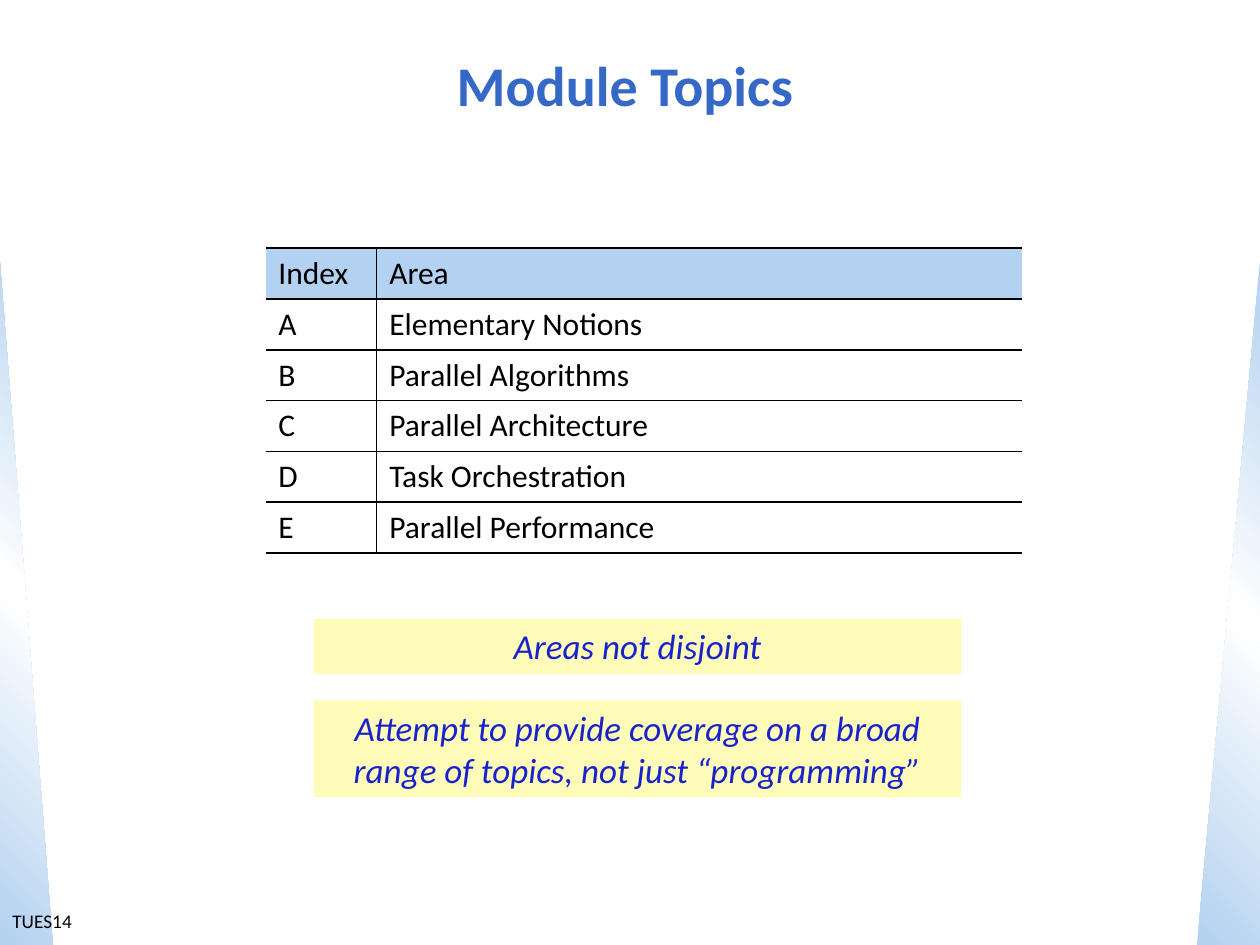
from copy import deepcopy
from pptx import Presentation
from pptx.dml.color import RGBColor
from pptx.enum.shapes import MSO_SHAPE
from pptx.enum.text import MSO_ANCHOR, PP_ALIGN
from pptx.oxml import parse_xml
from pptx.oxml.ns import nsdecls, qn
from pptx.util import Inches, Pt

HUES = {"title": "3568C7", "sky": "B3D1F0", "white": "FFFFFF",
        "note": "FFFBB8", "ink": "1822CD", "black": "000000"}
FONT = "Calibri"
TITLE = "Module Topics"
TAG = "TUES14"
ROWS = [("Index", "Area"), ("A", "Elementary Notions"),
        ("B", "Parallel Algorithms"), ("C", "Parallel Architecture"),
        ("D", "Task Orchestration"), ("E", "Parallel Performance")]
NOTES = [("Areas not disjoint", 4.91, 0.44),
         ("Attempt to provide coverage on a broad range of topics, "
          "not just “programming”", 5.56, 0.77)]
WIDE, HIGH = 10, 7.5
EDGES = [(0, 0.42, 45, False), (9.5, 0.5, 315, True)]
EDGE_TOP = 2.08
COLS = (0.88, 5.12)
GRID = (2.11, 1.97, sum(COLS), 2.42)
PLAIN = "{2D5ABB26-0587-4C30-8999-92F81FD0307C}"


def hue(name):
    return RGBColor.from_string(HUES[name])


def box(*dims):
    return [Inches(d) for d in dims]


def write(frame, text, size, color, align=PP_ALIGN.LEFT, bold=False, slant=False):
    para = frame.paragraphs[0]
    para.alignment = align
    run = para.add_run()
    run.text = text
    font = run.font
    font.name, font.size, font.bold, font.italic = FONT, Pt(size), bold, slant
    font.color.rgb = hue(color)


def label(slide, dims, text, *style, **more):
    frame = slide.shapes.add_textbox(*box(*dims)).text_frame
    frame.word_wrap = True
    frame.vertical_anchor = more.pop("anchor", MSO_ANCHOR.TOP)
    write(frame, text, *style, **more)


def shape(slide, kind, dims):
    item = slide.shapes.add_shape(kind, *box(*dims))
    item.shadow.inherit = False
    item.line.fill.background()
    return item


def edge(slide, left, width, angle, flip):
    item = shape(slide, MSO_SHAPE.RIGHT_TRIANGLE,
                 (left, EDGE_TOP, width, HIGH - EDGE_TOP))
    item.fill.gradient()
    item.fill.gradient_angle = angle
    stops = item.element.spPr.find(qn("a:gradFill")).find(qn("a:gsLst"))
    stops.insert(1, deepcopy(stops[0]))
    for stop, place, name in zip(item.fill.gradient_stops, (0, 0.5, 1),
                                 ("sky", "white", "sky")):
        stop.position = place
        stop.color.rgb = hue(name)
    if flip:
        item.element.spPr.find(qn("a:xfrm")).set("flipH", "1")


def rule(cell, sides):
    props = cell._tc.get_or_add_tcPr()
    for spot, side in enumerate(sides):
        props.insert(spot, parse_xml(
            f'<a:ln{side} {nsdecls("a")} w="12700"><a:solidFill>'
            f'<a:srgbClr val="{HUES["black"]}"/></a:solidFill></a:ln{side}>'))


def table(slide):
    frame = slide.shapes.add_table(len(ROWS), len(COLS), *box(*GRID))
    grid = frame.table
    grid.horz_banding = False
    frame.element.find(".//" + qn("a:tableStyleId")).text = PLAIN
    for col, width in zip(grid.columns, COLS):
        col.width = Inches(width)
    for r, row in enumerate(ROWS):
        grid.rows[r].height = Inches(GRID[3] / len(ROWS))
        for c, text in enumerate(row):
            cell = grid.cell(r, c)
            if r:
                cell.fill.background()
            else:
                cell.fill.solid()
                cell.fill.fore_color.rgb = hue("sky")
            rule(cell, "LTB" if c else "RTB")
            write(cell.text_frame, text, 18, "black")


def note(slide, text, top, height):
    item = shape(slide, MSO_SHAPE.RECTANGLE, (2.49, top, 5.14, height))
    item.fill.solid()
    item.fill.fore_color.rgb = hue("note")
    frame = item.text_frame
    frame.word_wrap = True
    frame.vertical_anchor = MSO_ANCHOR.TOP
    write(frame, text, 20, "ink", PP_ALIGN.CENTER, slant=True)


def main():
    deck = Presentation()
    deck.slide_width, deck.slide_height = box(WIDE, HIGH)
    slide = deck.slides.add_slide(deck.slide_layouts[6])
    for spec in EDGES:
        edge(slide, *spec)
    label(slide, (0.25, 0.25, 9.42, 0.83), TITLE, 32, "title",
          PP_ALIGN.CENTER, bold=True, anchor=MSO_ANCHOR.MIDDLE)
    table(slide)
    label(slide, (0, 7.17, 1.33, 0.33), TAG, 11, "black")
    for item in NOTES:
        note(slide, *item)
    deck.save("out.pptx")


if __name__ == "__main__":
    main()
